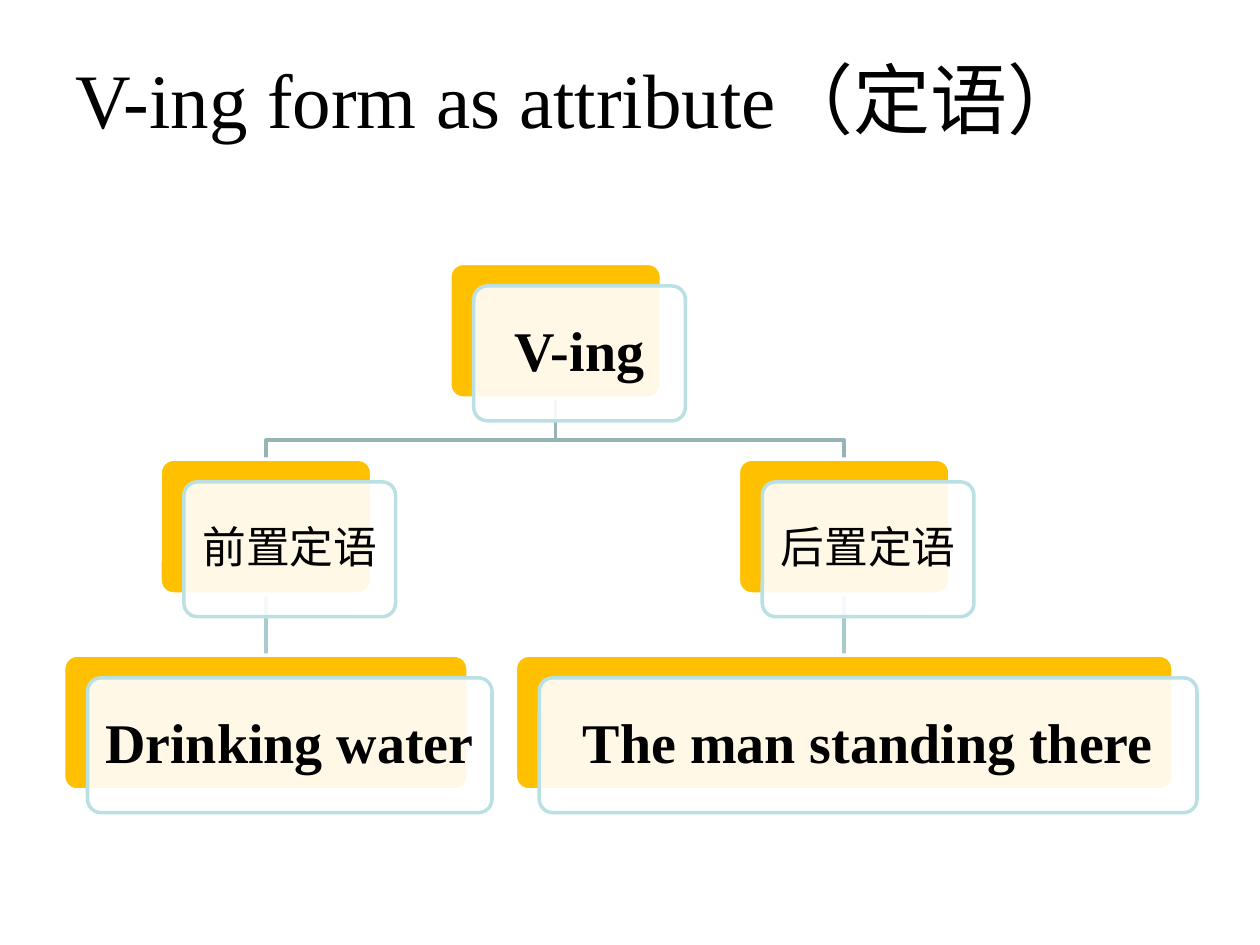
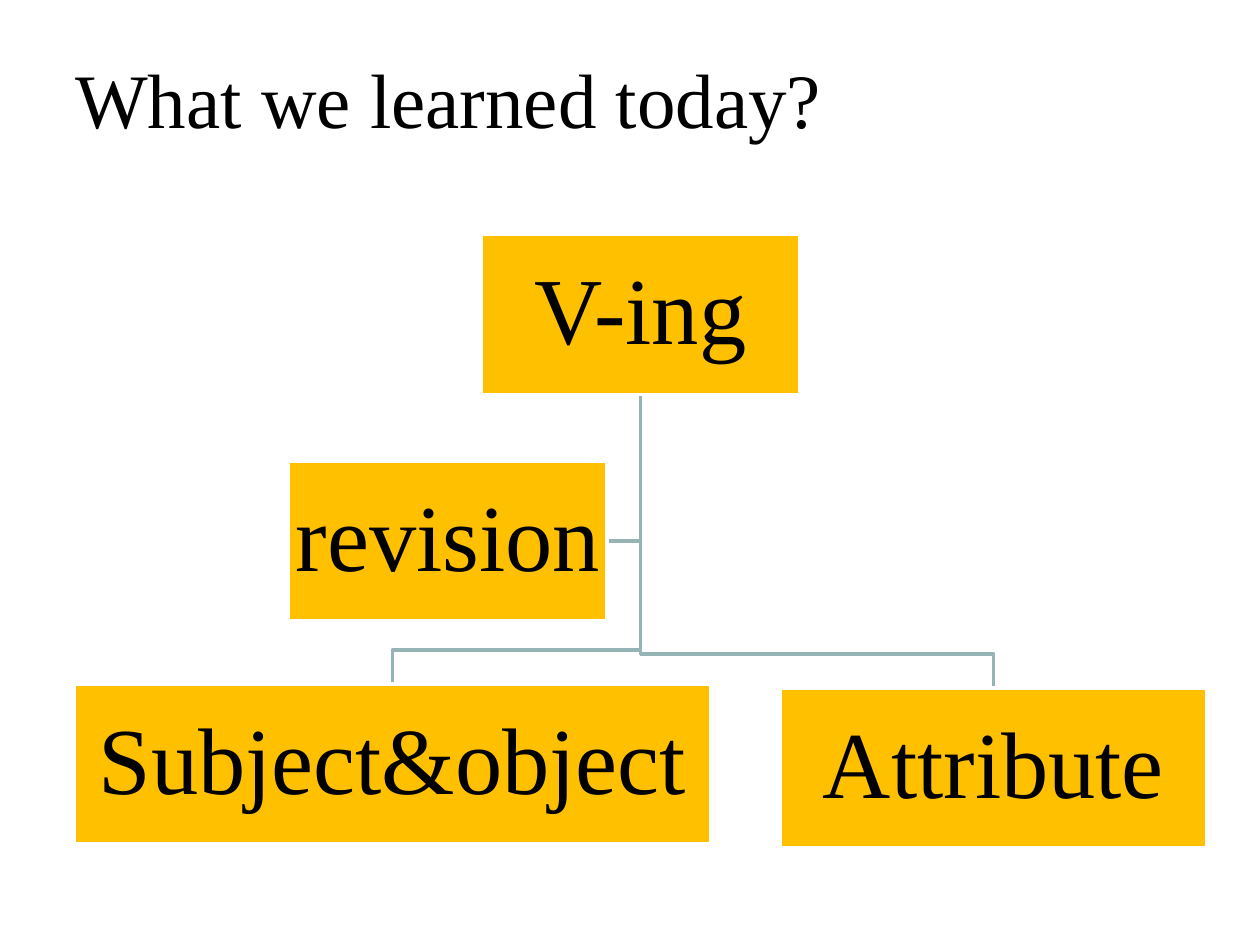
"""Build two slides of hierarchy diagrams about the V-ing form."""
from lxml import etree
from pptx import Presentation
from pptx.dml.color import RGBColor
from pptx.enum import shapes, text
from pptx.oxml import ns
from pptx.util import Inches, Pt

BLACK = RGBColor(0x00, 0x00, 0x00)
WHITE = RGBColor(0xFF, 0xFF, 0xFF)
AMBER = RGBColor(0xFF, 0xC0, 0x00)
PALE_TEAL = RGBColor(0xBB, 0xE0, 0xE3)
BRANCH = RGBColor(0x96, 0xB3, 0xB6)
LOWER_BRANCH = RGBColor(0xAA, 0xCB, 0xCE)
FONT = "Times New Roman"
TITLE_BOX = (0.5, 0.3, 9, 0.95)


def write(shape, wording, size, bold=False):
    """Put one run of black text, vertically centred, in a shape."""
    frame = shape.text_frame
    frame.vertical_anchor = text.MSO_ANCHOR.MIDDLE
    para = frame.paragraphs[0]
    span = para.add_run()
    span.text = wording
    span.font.name = FONT
    span.font.size = Pt(size)
    span.font.bold = bold
    span.font.color.rgb = BLACK
    return para


def write_label(shape, wording, size, margin, bold=False):
    """Centre a one-line label in a shape with equal margins."""
    para = write(shape, wording, size, bold)
    para.alignment = text.PP_ALIGN.CENTER
    para.line_spacing = 0.9
    frame = shape.text_frame
    frame.word_wrap = False
    frame.margin_left = frame.margin_right = Inches(margin)
    frame.margin_top = frame.margin_bottom = Inches(margin)


def add_title(page, wording):
    """Add the slide title."""
    box = page.shapes.add_textbox(*map(Inches, TITLE_BOX))
    box.text_frame.word_wrap = True
    write(box, wording, 44)


def add_panel(page, kind, box, fill, line):
    """Add a filled and outlined preset shape."""
    panel = page.shapes.add_shape(kind, *map(Inches, box))
    panel.shadow.inherit = False
    panel.fill.solid()
    panel.fill.fore_color.rgb = fill
    panel.line.color.rgb = line
    panel.line.width = Pt(2)
    return panel


def send_to_back(page, shape):
    """Move a shape behind all others on its slide."""
    page.shapes._spTree.insert(2, shape._element)


def add_path(page, points):
    """Draw an open line through the points, behind the boxes."""
    builder = page.shapes.build_freeform(*points[0], scale=1.0)
    builder.add_line_segments(points[1:], close=False)
    path_line = builder.convert_to_shape()
    path_line.shadow.inherit = False
    path_line.fill.background()
    path_line.line.color.rgb = BRANCH
    path_line.line.width = Pt(2)
    send_to_back(page, path_line)


def bottom_centre(shape):
    """Return the middle of the lower side of a shape."""
    return shape.left + shape.width // 2, shape.top + shape.height


def add_branch(page, parent, child, rise):
    """Link parent to child with a bend the given rise above the child."""
    start_x, start_y = bottom_centre(parent)
    end_x = child.left + child.width // 2
    bend_y = child.top - Inches(rise)
    add_path(page, [(start_x, start_y), (start_x, bend_y),
                    (end_x, bend_y), (end_x, child.top)])


def add_side_branch(page, parent, assistant):
    """Link parent to the right side of an assistant box."""
    start_x, start_y = bottom_centre(parent)
    middle_y = assistant.top + assistant.height // 2
    add_path(page, [(start_x, start_y), (start_x, middle_y),
                    (assistant.left + assistant.width, middle_y)])


def add_drop(page, parent, child):
    """Join parent to the child directly below it."""
    link = page.shapes.add_connector(shapes.MSO_CONNECTOR.STRAIGHT, 0, 0, 0, 0)
    link.begin_connect(parent, 2)
    link.end_connect(child, 0)
    link.line.color.rgb = LOWER_BRANCH
    link.line.width = Pt(2)
    etree.SubElement(link._element.spPr, ns.qn("a:effectLst"))
    send_to_back(page, link)


def add_card(page, box, wording, size, margin, bold):
    """Add an amber card with a translucent label card; return the amber one."""
    left, top, width, height = box
    rounded = shapes.MSO_SHAPE.ROUNDED_RECTANGLE
    back = add_panel(page, rounded, box, AMBER, WHITE)
    front = add_panel(page, rounded, (left + 0.19, top + 0.18, width, height),
                      WHITE, PALE_TEAL)
    for panel in (back, front):
        panel.adjustments[0] = 0.1
    colour = front._element.spPr.find(ns.qn("a:solidFill"))[0]
    etree.SubElement(colour, ns.qn("a:alpha"), val="90000")
    write_label(front, wording, size, margin, bold)
    return back


def add_attribute_tree(page, box):
    """Draw the three-level tree of attribute positions."""
    left, top = box
    level_gap, card_height, narrow = 1.555, 1.07, 1.68

    def card(centre, level, width, wording, chinese=False):
        """Place one card by its centre and level."""
        place = (left + centre - width / 2, top + level * level_gap,
                 width, card_height)
        size, margin = (25, 0.1) if chinese else (32, 0.13)
        return add_card(page, place, wording, size, margin, not chinese)

    root = card(3.91, 0, narrow, "V-ing")
    for centre, position, width, example in (
            (1.61, "前置定语", 3.21, "Drinking water"),
            (6.2, "后置定语", 5.22, "The man standing there")):
        middle = card(centre, 1, narrow, position, chinese=True)
        leaf = card(centre, 2, width, example)
        add_branch(page, root, middle, 0.15)
        add_drop(page, middle, leaf)


def add_summary_tree(page, box):
    """Draw the summary chart with one assistant box."""
    left, top = box

    def block(x, y, width, wording):
        """Place one amber block."""
        panel = add_panel(page, shapes.MSO_SHAPE.RECTANGLE,
                          (left + x, top + y, width, 1.27 - 0.02 + 0.02),
                          AMBER, WHITE)
        write_label(panel, wording, 54, 0.04)
        return panel

    root = block(3.23, 0, 2.53, "V-ing")
    for x, y, width, topic in ((0, 3.57, 5.05, "Subject&object"),
                               (5.6, 3.6, 3.39, "Attribute")):
        add_branch(page, root, block(x, y, width, topic), 0.27)
    add_side_branch(page, root, block(1.7, 1.8, 2.53, "revision"))


def main():
    """Build and save the deck."""
    deck = Presentation()
    deck.slide_width, deck.slide_height = Inches(10), Inches(7.5)
    for title, add_tree, box in (
            ("V-ing form as attribute（定语）", add_attribute_tree, (0.5, 2.09)),
            ("What we learned today?", add_summary_tree, (0.59, 1.86))):
        page = deck.slides.add_slide(deck.slide_layouts[6])
        add_title(page, title)
        add_tree(page, box)
    deck.save("out.pptx")


if __name__ == "__main__":
    main()
